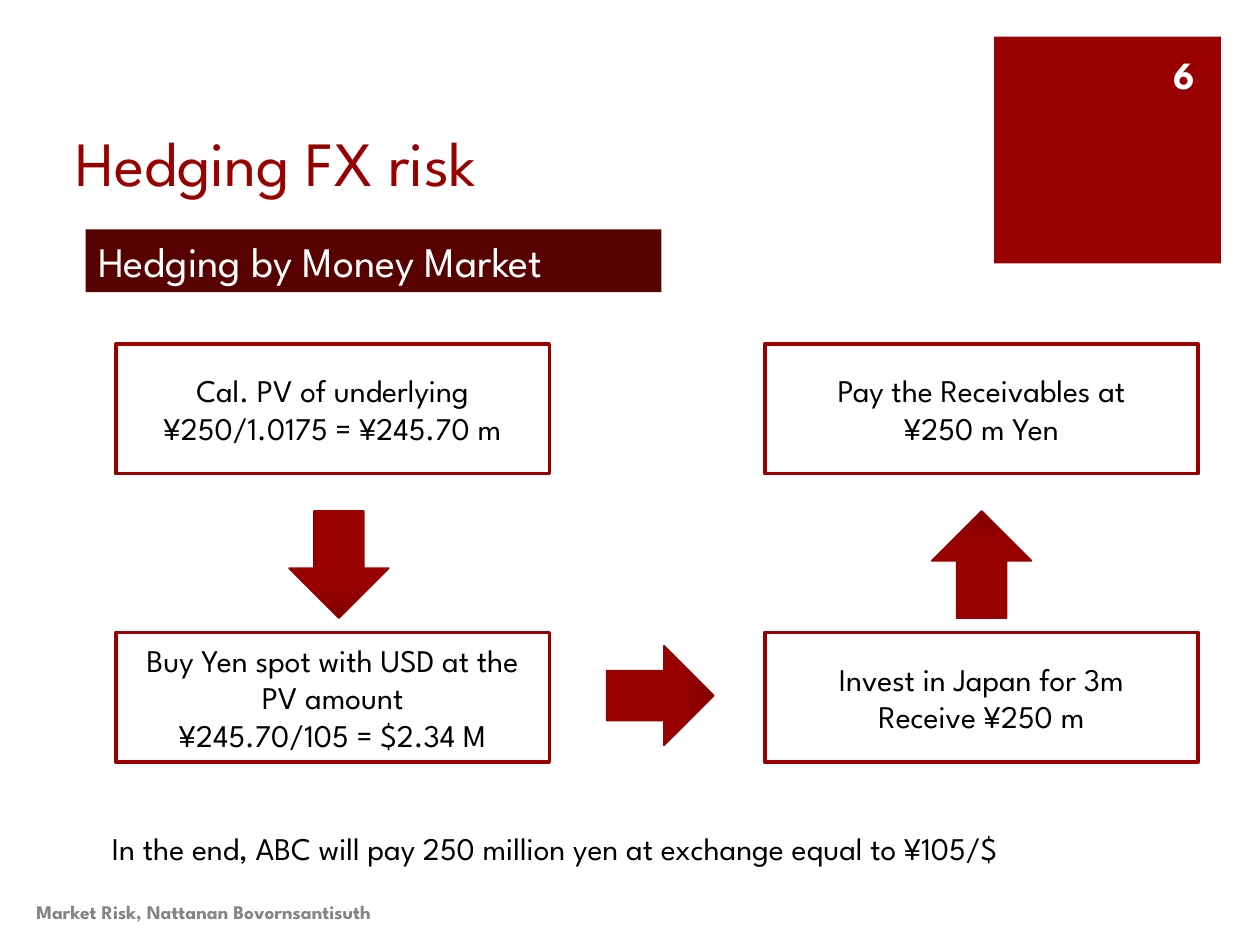
from pptx import Presentation
from pptx.dml.color import RGBColor
from pptx.enum.shapes import MSO_SHAPE
from pptx.enum.text import MSO_ANCHOR, MSO_AUTO_SIZE, PP_ALIGN
from pptx.util import Inches, Pt

RECT, DOWN_ARROW = MSO_SHAPE.RECTANGLE, MSO_SHAPE.DOWN_ARROW
TOP, MIDDLE, BOTTOM = MSO_ANCHOR.TOP, MSO_ANCHOR.MIDDLE, MSO_ANCHOR.BOTTOM
LEFT, CENTER, RIGHT = PP_ALIGN.LEFT, PP_ALIGN.CENTER, PP_ALIGN.RIGHT
NO_AUTOFIT = MSO_AUTO_SIZE.NONE

RED = RGBColor(0x99, 0x00, 0x00)
SHADE_RED = RGBColor(0x83, 0x00, 0x00)
EDGE_RED = RGBColor(0x96, 0x00, 0x00)
DARK_RED = RGBColor(0x58, 0x01, 0x01)
GRAY = RGBColor(0x85, 0x85, 0x85)
BLACK = RGBColor(0x00, 0x00, 0x00)
WHITE = RGBColor(0xFF, 0xFF, 0xFF)
FONT = "League Spartan"

TITLE_ONLY = 5
STEP_W, STEP_H = 3.44, 1.03
COLUMN_PITCH, ROW_PITCH = 5.15, 2.29
ARROW_W, ARROW_H = 0.79, 0.85

# Each step: grid column, grid row, lines of text
STEPS = [
    (0, 0, ["Cal. PV of underlying", "¥250/1.0175 = ¥245.70 m"]),
    (0, 1, ["Buy Yen spot with USD at the PV amount", "¥245.70/105 = $2.34 M"]),
    (1, 1, ["Invest in Japan for 3m", "Receive ¥250 m"]),
    (1, 0, ["Pay the Receivables at", "¥250 m Yen"]),
]
# Each arrow: centre relative to the flow's corner, rotation
ARROWS = [(1.77, 1.75, 0), (4.32, 2.79, 270), (6.87, 1.75, 180)]


def write(shape, lines, size, color, align=LEFT, anchor=TOP, bold=False, wrap=True):
    frame = shape.text_frame
    frame.word_wrap = wrap
    frame.auto_size = NO_AUTOFIT
    frame.vertical_anchor = anchor
    for index, line in enumerate(lines):
        paragraph = frame.add_paragraph() if index else frame.paragraphs[0]
        paragraph.alignment = align
        run = paragraph.add_run()
        run.text = line
        run.font.name = FONT
        run.font.size = Pt(size)
        run.font.bold = bold
        run.font.color.rgb = color


def add_text(slide, box, *args, **kwargs):
    write(slide.shapes.add_textbox(*map(Inches, box)), *args, **kwargs)


def add_block(slide, box, fill, line=None, kind=RECT, width=2):
    block = slide.shapes.add_shape(kind, *map(Inches, box))
    block.shadow.inherit = False
    if fill is not None:
        block.fill.solid()
        block.fill.fore_color.rgb = fill
    if line is None:
        block.line.fill.background()
    else:
        block.line.color.rgb = line
        block.line.width = Pt(width)
    return block


def add_number_square(slide, left, top, side):
    add_block(slide, (left, top, side, side), RED)
    add_text(slide, (left + 1.14, top + 0.1, 0.55, 0.4), ["6"], 22, WHITE,
             align=RIGHT, anchor=MIDDLE, bold=True)


def add_heading(slide, left, top, width, height):
    title = slide.shapes.title
    title.left, title.top = Inches(left), Inches(top)
    title.width, title.height = Inches(width), Inches(height)
    write(title, ["Hedging FX risk"], 36, RED, anchor=BOTTOM)
    # Subtitle band below the title
    band = add_block(slide, (left + 0.18, top + height + 0.19, 4.57, 0.5), DARK_RED)
    write(band, ["Hedging by Money Market"], 24, WHITE, wrap=False)


def add_arrow(slide, center_x, center_y, rotation):
    box = (center_x - ARROW_W / 2, center_y - ARROW_H / 2, ARROW_W, ARROW_H)
    arrow = add_block(slide, box, None, EDGE_RED, DOWN_ARROW, width=1)
    arrow.rotation = rotation
    # Darker towards the tip
    arrow.fill.gradient()
    arrow.fill.gradient_angle = 90
    stops = arrow.fill.gradient_stops
    for stop, position, color in zip(stops, (0, 0.35), (SHADE_RED, RED)):
        stop.position = position
        stop.color.rgb = color


def add_flow(slide, left, top):
    for column, row, lines in STEPS:
        box = (left + column * COLUMN_PITCH, top + row * ROW_PITCH, STEP_W, STEP_H)
        step = add_block(slide, box, WHITE, RED)
        write(step, lines, 18, BLACK, align=CENTER, anchor=MIDDLE)
    for x, y, rotation in ARROWS:
        add_arrow(slide, left + x, top + y, rotation)


def add_closing(slide, left, top, width, height):
    conclusion = "In the end, ABC will pay 250 million yen at exchange equal to ¥105/$"
    add_text(slide, (left, top, width, height), [conclusion], 18, BLACK, wrap=False)


def add_footer(slide, left, top, width, height):
    add_text(slide, (left, top, width, height), ["Market Risk, Nattanan Bovornsantisuth"],
             11, GRAY, anchor=MIDDLE, bold=True)


def main():
    deck = Presentation()
    deck.slide_width, deck.slide_height = Inches(10), Inches(7.5)
    slide = deck.slides.add_slide(deck.slide_layouts[TITLE_ONLY])
    add_number_square(slide, 7.89, 0.29, 1.8)
    add_heading(slide, 0.5, 0.38, 7.12, 1.25)
    add_flow(slide, 0.92, 2.73)
    add_closing(slide, 0.79, 6.53, 8.58, 0.4)
    add_footer(slide, 0.19, 7.04, 6.57, 0.4)
    deck.save("out.pptx")


if __name__ == "__main__":
    main()
